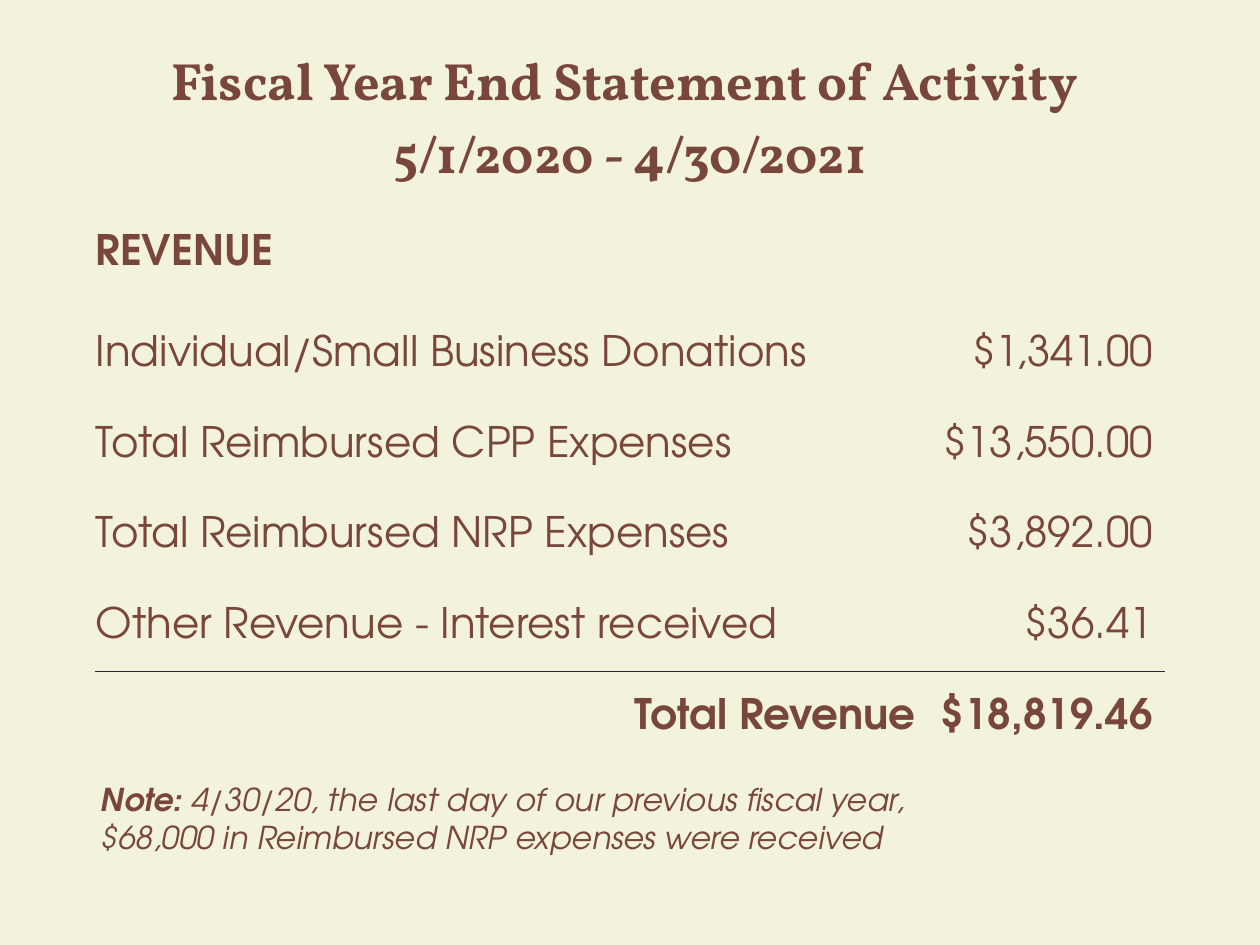
import dataclasses

import pptx
import pptx.dml.color
import pptx.enum.text
import pptx.oxml
import pptx.oxml.ns
import pptx.util

Inches = pptx.util.Inches
Align = pptx.enum.text.PP_ALIGN
INK, PAPER, RULE = "79463D", "F3F2DC", "292934"
SANS, SERIF = "TeX Gyre Adventor", "Vollkorn"
PLAIN = "{2D5ABB26-0587-4C30-8999-92F81FD0307C}"  # no style, no grid


@dataclasses.dataclass
class Entry:
    label: str
    amount: str = ""
    bold: bool = False
    side: Align = Align.LEFT


TITLE = ["Fiscal Year End Statement of Activity ", "5/1/2020 - 4/30/2021"]
ROWS = [
    Entry("REVENUE", bold=True),
    Entry("Individual/Small Business Donations", "$1,341.00 "),
    Entry("Total Reimbursed CPP Expenses", "$13,550.00 "),
    Entry("Total Reimbursed NRP Expenses", "$3,892.00 "),
    Entry("Other Revenue - Interest received", "$36.41 "),
    Entry("Total Revenue ", "$18,819.46 ", True, Align.RIGHT),
]
WIDTHS = [6.62, 1.88]
HEIGHTS = [1.09, 0.89] + [0.72] * 5


def color(code: str) -> pptx.dml.color.RGBColor:
    return pptx.dml.color.RGBColor.from_string(code)


def style(font, size: float, name: str = SANS, **extra) -> None:
    form = {"size": pptx.util.Pt(size), "name": name, **extra}
    for key, value in form.items():
        setattr(font, key, value)
    font.color.rgb = color(INK)


def fill_cell(cell, lines: list[str], side: Align, size: float,
              name: str, bold: bool) -> None:
    form = {
        "margin_left": Inches(0.01), "margin_right": Inches(0.01),
        "margin_top": Inches(0.01), "margin_bottom": 0,
        "vertical_anchor": pptx.enum.text.MSO_ANCHOR.MIDDLE,
    }
    for key, value in form.items():
        setattr(cell, key, value)
    cell.fill.background()
    cell.text = "\n".join(lines)
    for para in cell.text_frame.paragraphs:
        para.alignment = side
        style(para.font, size, name, bold=bold)
        for run in para.runs:
            style(run.font, size, name, bold=bold)


def rule_cell(cell, edge: str) -> None:
    space = pptx.oxml.ns.nsdecls("a")
    line = pptx.oxml.parse_xml(
        f'<a:{edge} {space} w="12700"><a:solidFill><a:srgbClr val="{RULE}"/>'
        f'</a:solidFill><a:prstDash val="solid"/></a:{edge}>')
    cell._tc.get_or_add_tcPr().insert(0, line)


def add_grid(slide) -> None:
    frame = slide.shapes.add_table(
        len(HEIGHTS), len(WIDTHS), Inches(0.75), Inches(0.39),
        Inches(sum(WIDTHS)), Inches(sum(HEIGHTS)))
    grid = frame.table
    grid.first_row = grid.horz_banding = False
    grid._tbl.tblPr.find(pptx.oxml.ns.qn("a:tableStyleId")).text = PLAIN
    for column, width in zip(grid.columns, WIDTHS):
        column.width = Inches(width)
    for row, height in zip(grid.rows, HEIGHTS):
        row.height = Inches(height)

    # Title across both columns
    grid.cell(0, 0).merge(grid.cell(0, 1))
    fill_cell(grid.cell(0, 0), TITLE, Align.CENTER, 30, SERIF, True)

    # Revenue lines
    for index, entry in enumerate(ROWS, 1):
        fill_cell(grid.cell(index, 0), [entry.label], entry.side,
                  24, SANS, entry.bold)
        fill_cell(grid.cell(index, 1), [entry.amount], Align.RIGHT,
                  24, SANS, entry.bold)

    # Rule above the total
    last = len(ROWS)
    for column in range(len(WIDTHS)):
        rule_cell(grid.cell(last - 1, column), "lnB")
        rule_cell(grid.cell(last, column), "lnT")


def add_note(slide) -> None:
    box = slide.shapes.add_textbox(
        Inches(0.75), Inches(6.14), Inches(7.38), Inches(0.71))
    frame = box.text_frame
    form = {"word_wrap": True,
            "auto_size": pptx.enum.text.MSO_AUTO_SIZE.SHAPE_TO_FIT_TEXT}
    for side in ("left", "right", "top", "bottom"):
        form[f"margin_{side}"] = Inches(0.05)
    for key, value in form.items():
        setattr(frame, key, value)
    parts = [
        ("Note: ", True),
        ("4/30/20, the last day of our previous fiscal year, "
         "$68,000 in Reimbursed NRP expenses were received", False),
    ]
    for text, bold in parts:
        run = frame.paragraphs[0].add_run()
        run.text = text
        style(run.font, 18, bold=bold, italic=True)


def main() -> None:
    deck = pptx.Presentation()
    deck.slide_width, deck.slide_height = Inches(10), Inches(7.5)
    slide = deck.slides.add_slide(deck.slide_layouts[6])
    back = slide.background.fill
    back.solid()
    back.fore_color.rgb = color(PAPER)
    add_grid(slide)
    add_note(slide)
    deck.save("out.pptx")


if __name__ == "__main__":
    main()
